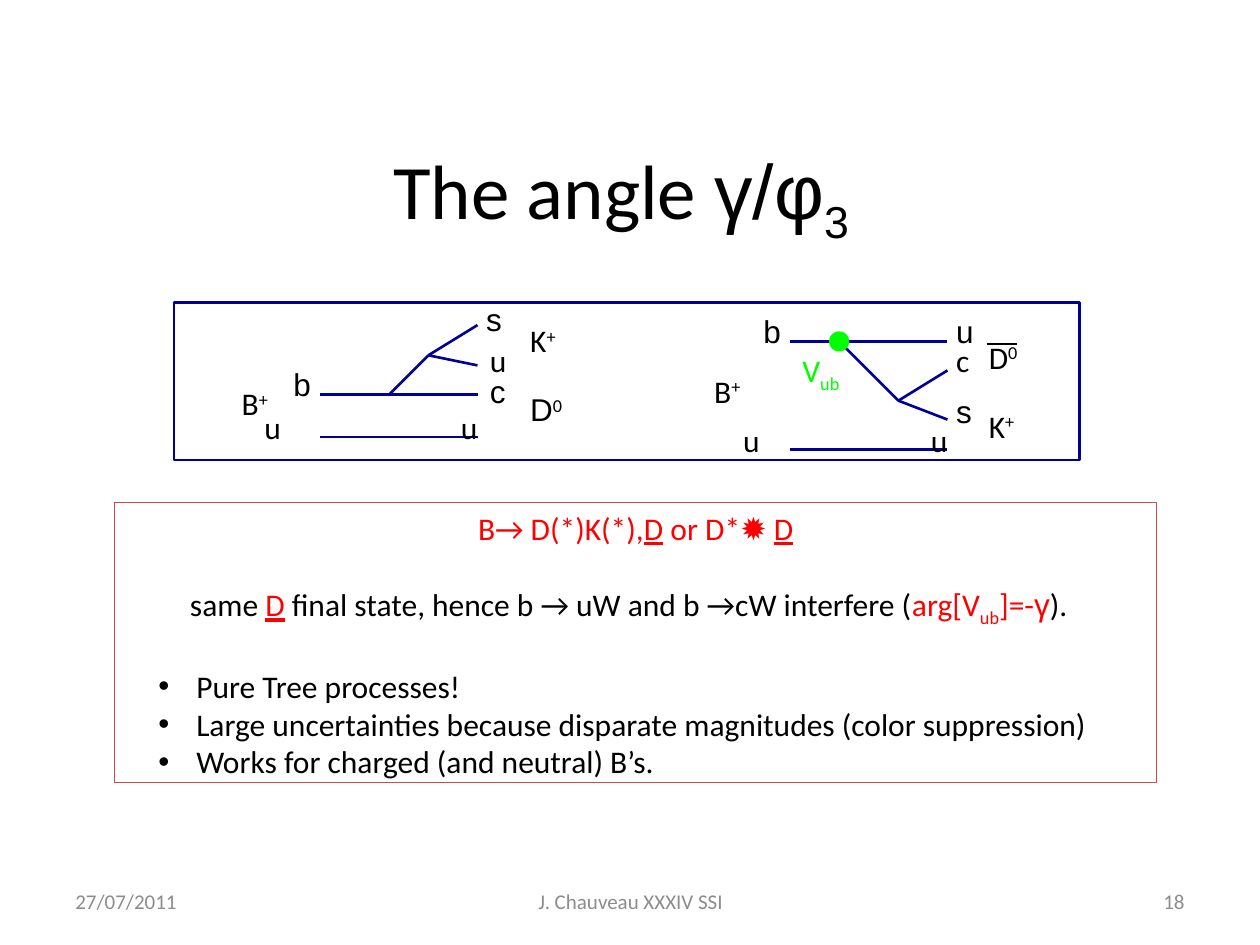
from dataclasses import dataclass

from lxml.etree import SubElement
from pptx import Presentation
from pptx.dml.color import RGBColor
from pptx.enum.shapes import MSO_CONNECTOR, MSO_SHAPE
from pptx.enum.text import MSO_ANCHOR, PP_ALIGN
from pptx.oxml.ns import qn
from pptx.util import Inches, Pt

BLACK, RED, GREEN, NAVY = "000000", "FF0000", "00FF00", "000099"
BRICK, GREY = "C0504D", "8C8C8C"
BODY, SYMBOL = "Calibri", "Arial"


@dataclass
class Part:
    """A stretch of text in one format; baseline is in percent."""
    text: str
    colour: str = BLACK
    font: str = BODY
    baseline: int = 0
    underline: bool = False


def rgb(colour):
    return RGBColor.from_string(colour)


def write(paragraph, parts, size, align=PP_ALIGN.LEFT):
    paragraph.alignment = align
    for part in parts:
        run = paragraph.add_run()
        run.text = part.text
        run.font.size = Pt(size)
        run.font.name = part.font
        run.font.color.rgb = rgb(part.colour)
        if part.underline:
            run.font.underline = True
        if part.baseline:
            run.font._element.set("baseline", str(part.baseline * 1000))


def add_text(shapes, box, parts, size=18, align=PP_ALIGN.LEFT, anchor=MSO_ANCHOR.TOP):
    frame = shapes.add_textbox(*map(Inches, box)).text_frame
    frame.word_wrap = True
    frame.vertical_anchor = anchor
    write(frame.paragraphs[0], parts, size, align)


def add_outline(shapes, box, colour, width):
    shape = shapes.add_shape(MSO_SHAPE.RECTANGLE, *map(Inches, box))
    shape.shadow.inherit = False
    shape.fill.background()
    shape.line.color.rgb = rgb(colour)
    shape.line.width = Pt(width)
    return shape


def add_line(shapes, start, end, colour=NAVY):
    line = shapes.add_connector(MSO_CONNECTOR.STRAIGHT, *map(Inches, start + end))
    line.line.color.rgb = rgb(colour)
    line.line.width = Pt(1.5)
    SubElement(line._element.spPr, qn("a:effectLst"))


def add_decay(shapes, left, top, quark_rows, branches, labels):
    """Draw one decay: two full quark lines, the W branches and the labels."""
    def place(point):
        return left + point[0], top + point[1]

    for row in quark_rows:
        add_line(shapes, place((1.16, row)), place((2.41, row)))
    vertex, fork, *ends = branches
    add_line(shapes, place(vertex), place(fork))
    for end in ends:
        add_line(shapes, place(fork), place(end))
    for x, y, *parts in labels:
        add_text(shapes, (*place((x, y)), 0.6, 0.44), parts)


def add_vub_vertex(shapes, left, top):
    dot = shapes.add_shape(MSO_SHAPE.OVAL, *map(Inches, (left, top, 0.16, 0.16)))
    dot.shadow.inherit = False
    dot.fill.solid()
    dot.fill.fore_color.rgb = rgb(GREEN)
    dot.line.fill.background()
    add_text(shapes, (left - 0.31, top + 0.11, 0.6, 0.44),
             [Part("V", GREEN), Part("ub", GREEN, baseline=-25)])


def add_diagrams(slide, left, top, width, height):
    shapes = slide.shapes.add_group_shape().shapes
    add_outline(shapes, (left, top, width, height), NAVY, 1.5)
    plus, zero = Part("+", baseline=30), Part("0", baseline=30)
    add_decay(
        shapes, left, top, (0.73, 1.07),
        [(1.71, 0.73), (2.02, 0.42), (2.41, 0.5), (2.41, 0.18)],
        [(2.38, -0.07, Part("s", font=SYMBOL)), (0.85, 0.45, Part("b", font=SYMBOL)),
         (0.62, 0.79, Part("u")), (2.18, 0.79, Part("u")), (2.41, 0.26, Part("u")),
         (2.41, 0.5, Part("c", font=SYMBOL)), (0.44, 0.6, Part("B"), plus),
         (2.73, 0.65, Part("D", font=SYMBOL), zero), (2.73, 0.1, Part("K"), plus)])
    right = left + 3.73
    add_decay(
        shapes, right, top, (0.31, 1.17),
        [(1.55, 0.31), (2.02, 0.78), (2.41, 0.93), (2.41, 0.54)],
        [(2.38, 0.03, Part("u", font=SYMBOL)), (0.85, 0.03, Part("b", font=SYMBOL)),
         (0.69, 0.89, Part("u")), (2.18, 0.89, Part("u")), (2.38, 0.26, Part("c")),
         (2.38, 0.66, Part("s", font=SYMBOL)), (0.46, 0.5, Part("B"), plus),
         (2.64, 0.78, Part("K"), plus), (2.64, 0.23, Part("D"), zero)])
    add_vub_vertex(shapes, right + 1.47, top + 0.23)
    bar = top + 0.33
    add_line(shapes, (right + 2.72, bar), (right + 2.96, bar), BLACK)


def indent(paragraph, margin, first=0.0):
    properties = paragraph._p.get_or_add_pPr()
    properties.set("marL", str(Inches(margin)))
    properties.set("indent", str(Inches(first)))
    return properties


def add_bullet(paragraph):
    properties = indent(paragraph, 0.55, -0.3)
    SubElement(properties, qn("a:buFont"), typeface=SYMBOL)
    SubElement(properties, qn("a:buChar"), char="•")


def add_summary(slide, box):
    frame = add_outline(slide.shapes, box, BRICK, 0.75).text_frame
    frame.word_wrap = True
    frame.vertical_anchor = MSO_ANCHOR.TOP
    d_meson = Part("D", RED, underline=True)
    write(frame.paragraphs[0],
          [Part("B→ D(*)K(*),", RED), d_meson, Part(" or D*✹ ", RED), d_meson],
          18, PP_ALIGN.CENTER)
    gap = Pt(22)
    interference = frame.add_paragraph()
    indent(interference, 0.5)
    interference.space_before = gap
    write(interference,
          [Part("same "), d_meson,
           Part(" final state, hence b → uW and b →cW interfere ("),
           Part("arg[V", RED), Part("ub", RED, baseline=-25), Part("]=-", RED),
           Part("γ", RED, SYMBOL), Part(").")], 18)
    remarks = ["Pure Tree processes!",
               "Large uncertainties because disparate magnitudes (color suppression)",
               "Works for charged (and neutral) B’s."]
    for number, remark in enumerate(remarks):
        paragraph = frame.add_paragraph()
        add_bullet(paragraph)
        if number == 0:
            paragraph.space_before = gap
        write(paragraph, [Part(remark)], 18)


def add_footer(slide, top, height):
    for left, width, text, align in [
            (0.5, 2.33, "27/07/2011", PP_ALIGN.LEFT),
            (3.42, 3.17, "J. Chauveau XXXIV SSI", PP_ALIGN.CENTER),
            (7.17, 2.33, "18", PP_ALIGN.RIGHT)]:
        add_text(slide.shapes, (left, top, width, height), [Part(text, GREY)],
                 12, align, MSO_ANCHOR.MIDDLE)


def main():
    presentation = Presentation()
    presentation.slide_width, presentation.slide_height = Inches(10), Inches(7.5)
    slide = presentation.slides.add_slide(presentation.slide_layouts[6])
    add_text(slide.shapes, (0.43, 0.92, 9, 1.25),
             [Part("The angle "), Part("γ/φ", font=SYMBOL),
              Part("3", font=SYMBOL, baseline=-25)],
             44, PP_ALIGN.CENTER, MSO_ANCHOR.MIDDLE)
    add_footer(slide, 6.95, 0.4)
    add_summary(slide, (0.91, 3.99, 8.27, 2.22))
    add_diagrams(slide, 1.38, 2.4, 7.19, 1.25)
    presentation.save("out.pptx")


if __name__ == "__main__":
    main()
